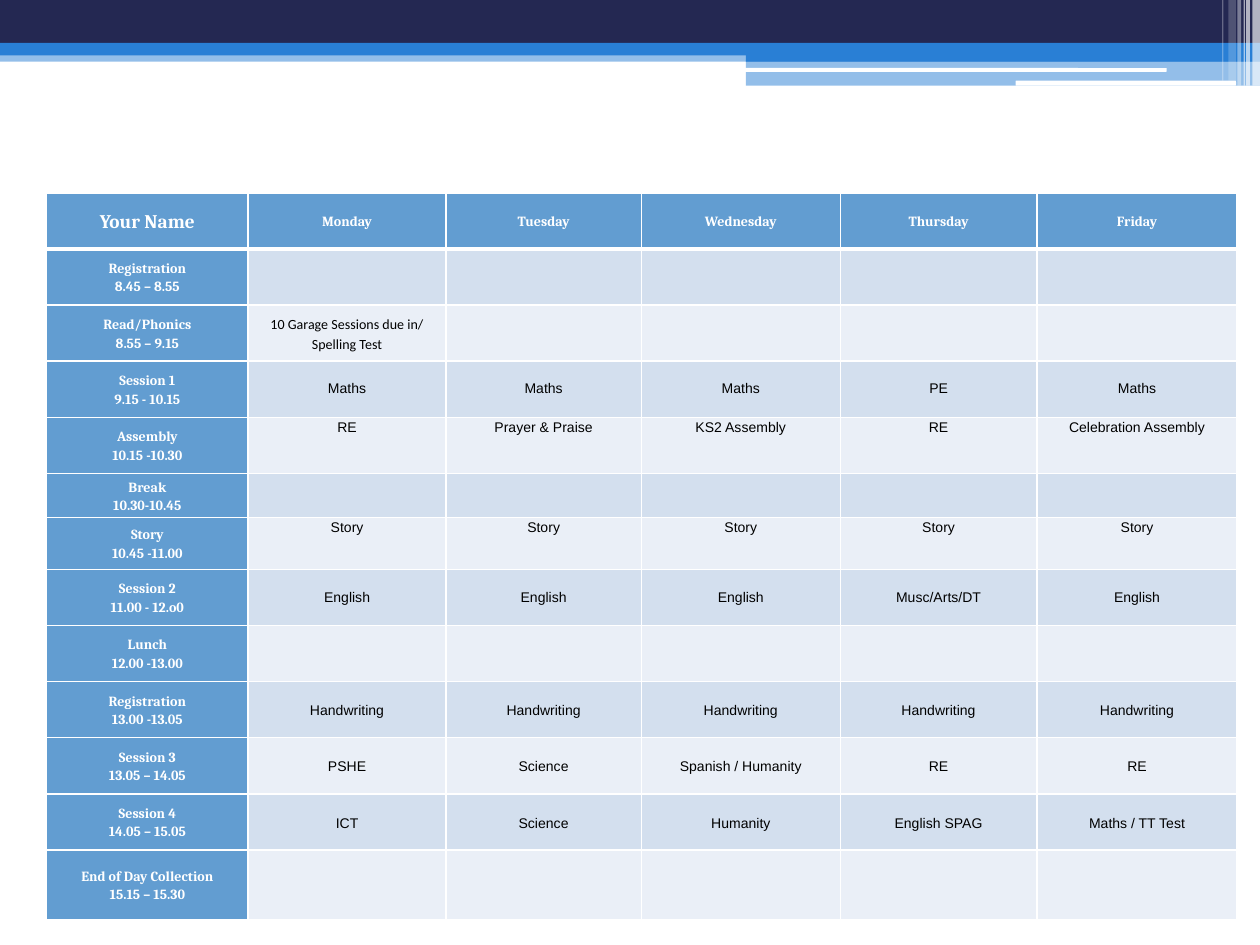
from lxml import etree
from pptx import Presentation
from pptx import util as u
from pptx.dml.color import RGBColor
from pptx.enum import shapes, text
from pptx.oxml.ns import qn

COLORS = {
    "navy": "242852", "blue": "297FD5", "white": "FFFFFF", "black": "000000",
    "heading": "629DD1", "odd": "D3DFEE", "even": "EAEFF7",
}
BANDS = [
    (0, 40, 1000, 9, "blue", 50),
    (0, 0, 1000, 34, "navy", 100),
    (0, 34, 1000, 10, "blue", 100),
    (592, 39, 408, 10, "blue", 100),
    (592, 48, 408, 20, "blue", 50),
]
GROOVES = [(591, 54, 335, 3, "white", 100), (806, 64, 175, 4, "white", 100)]
STRIPES = [
    (994, 0, 6, 68, "white", 65),
    (989, 0, 3, 68, "white", 65),
    (987, 0, 1, 68, "white", 60),
    (982, 0, 3, 68, "white", 40),
    (975, 0, 6, 64, "white", 20),
    (970, 0, 1, 64, "white", 30),
]
DAYS = ["Your Name", "Monday", "Tuesday", "Wednesday", "Thursday", "Friday"]
LESSONS = [
    ("Registration\n8.45 – 8.55", []),
    ("Read/Phonics\n8.55 – 9.15", ["10 Garage Sessions due in/\nSpelling Test"]),
    ("Session 1\n9.15 - 10.15", ["Maths", "Maths", "Maths", "PE", "Maths"]),
    ("Assembly\n10.15 -10.30",
     ["RE", "Prayer & Praise", "KS2 Assembly", "RE", "Celebration Assembly"]),
    ("Break\n10.30-10.45", []),
    ("Story\n10.45 -11.00", ["Story"] * 5),
    ("Session 2\n11.00 - 12.o0",
     ["English", "English", "English", "Musc/Arts/DT", "English"]),
    ("Lunch\n12.00 -13.00", []),
    ("Registration\n13.00 -13.05", ["Handwriting"] * 5),
    ("Session 3\n13.05 – 14.05",
     ["PSHE", "Science", "Spanish / Humanity", "RE", "RE"]),
    ("Session 4\n14.05 – 15.05",
     ["ICT", "Science", "Humanity", "English SPAG", "Maths / TT Test"]),
    ("End of Day Collection\n15.15 – 15.30", []),
]
DAY_WIDTHS = [1.6, 1.57, 1.55, 1.58, 1.56, 1.59]
SPECIAL_HEIGHTS = {5: 0.35, 6: 0.41, 12: 0.55}
TOP_ROWS = {4, 6}
LOWERED_ROWS = {3, 7}
PHONICS_ROW = 2


def rgb(name):
    return RGBColor.from_string(COLORS[name])


def add_bar(slide, box, kind, bar):
    left, top, width, _ = box
    unit = width / 1000
    x, y, w, h, color, opacity = bar
    shape = slide.shapes.add_shape(
        kind, int(left + x * unit), int(top + y * unit), int(w * unit), int(h * unit))
    shape.shadow.inherit = False
    shape.line.fill.background()
    shape.fill.solid()
    shape.fill.fore_color.rgb = rgb(color)
    if opacity < 100:
        tint = shape.fill._xPr.find(".//" + qn("a:srgbClr"))
        etree.SubElement(tint, qn("a:alpha"), val=str(opacity * 1000))


def add_banner(slide, box):
    rectangle = shapes.MSO_SHAPE.RECTANGLE
    rounded = shapes.MSO_SHAPE.ROUNDED_RECTANGLE
    for kind, bars in ((rectangle, BANDS), (rounded, GROOVES), (rectangle, STRIPES)):
        for bar in bars:
            add_bar(slide, box, kind, bar)


def set_borders(cell, row):
    weights = {"L": 1, "R": 1, "T": 3 if row == 1 else 1, "B": 3 if row == 0 else 1}
    properties = cell._tc.get_or_add_tcPr()
    for place, (side, weight) in enumerate(weights.items()):
        line = etree.Element(qn("a:ln" + side), w=str(u.Pt(weight)))
        fill = etree.SubElement(line, qn("a:solidFill"))
        etree.SubElement(fill, qn("a:srgbClr"), val=COLORS["white"])
        properties.insert(place, line)


def fill_cell(cell, row, column, words):
    heading = row == 0 or column == 0
    cell.fill.solid()
    cell.fill.fore_color.rgb = rgb("heading" if heading else "odd" if row % 2 else "even")
    set_borders(cell, row)
    cell.margin_left = cell.margin_right = u.Inches(0.06)
    cell.margin_top = cell.margin_bottom = 0
    cell.vertical_anchor = text.MSO_ANCHOR.MIDDLE
    if not heading and row in TOP_ROWS | LOWERED_ROWS:
        cell.vertical_anchor = text.MSO_ANCHOR.TOP
        cell.margin_top = u.Inches(0.14 if row in LOWERED_ROWS else 0)
    cell.text = words
    for paragraph in cell.text_frame.paragraphs:
        paragraph.alignment = text.PP_ALIGN.CENTER
        paragraph.line_spacing = 1.15
        font = paragraph.font
        font.size = u.Pt(11 if row == column == 0 else 8)
        font.bold = heading
        font.color.rgb = rgb("white" if heading else "black")
        font.name = "Cambria" if heading else "Calibri" if row == PHONICS_ROW else "Arial"


def add_timetable(slide, box):
    left, top, width, height = box
    rows = len(LESSONS) + 1
    timetable = slide.shapes.add_table(rows, len(DAYS), left, top, width, height).table
    timetable.first_col = True
    for column, share in zip(timetable.columns, DAY_WIDTHS):
        column.width = int(width * share / sum(DAY_WIDTHS))
    special = {row: u.Inches(size) for row, size in SPECIAL_HEIGHTS.items()}
    regular = (height - sum(special.values())) // (rows - len(special))
    entries = [DAYS] + [[session] + subjects for session, subjects in LESSONS]
    for row, words in enumerate(entries):
        timetable.rows[row].height = special.get(row, regular)
        words = words + [""] * (len(DAYS) - len(words))
        for column, entry in enumerate(words):
            fill_cell(timetable.cell(row, column), row, column, entry)


def main():
    deck = Presentation()
    deck.slide_width, deck.slide_height = u.Inches(10), u.Inches(7.5)
    slide = deck.slides.add_slide(deck.slide_layouts[6])
    add_banner(slide, (0, 0, deck.slide_width, u.Inches(0.68)))
    add_timetable(slide, [u.Inches(size) for size in (0.37, 1.53, 9.45, 5.77)])
    deck.save("out.pptx")


if __name__ == "__main__":
    main()
